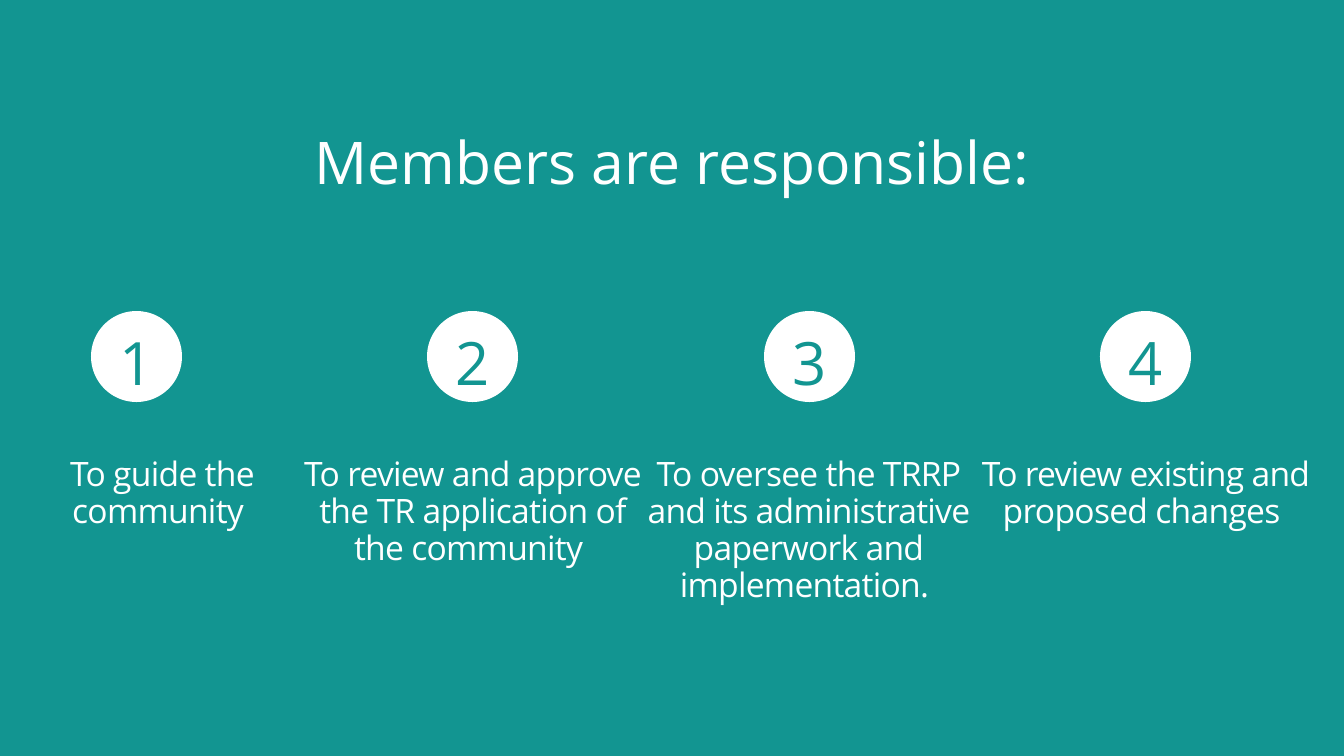
"""Build the slide listing the four responsibilities of members."""
from pptx import Presentation
from pptx import util as u
from pptx.dml.color import RGBColor
from pptx.enum import shapes, text
from pptx.oxml.ns import qn

TITLE = "Members are responsible:"
DUTIES = [
    ("To guide the community ", 73),
    ("To review and approve the TR application of the community ", 110),
    ("To oversee the TRRP and its administrative paperwork and implementation. ", 183),
    ("To review existing and proposed changes ", 73),
]

THEME = {
    "teal": RGBColor.from_string("129591"),
    "white": RGBColor.from_string("FFFFFF"),
    "font": "Open Sans",
    "title": {"size": 42, "line": 50.4, "spacing": 0, "color": "white"},
    "caption": {"size": 24, "line": 26.4, "spacing": -50, "color": "white"},
    "number": {"size": 42.7, "line": 67, "spacing": -110, "color": "teal"},
}

SLIDE_WIDTH, SLIDE_HEIGHT = 1344, 756
PITCH = 1009 / 3
CIRCLE_LEFT, CIRCLE_TOP, CIRCLE_SIZE = 91, 311, 91
NUMBER_TOP, NUMBER_HEIGHT = 304, 84
CAPTION_TOP, CAPTION_WIDTH = 456, 337
FIRST_LEFT, SECOND_LEFT = 20, 304


def px(length):
    return u.Emu(round(round(length) * 914400 / 100.8))


def set_all(target, values):
    for name, value in values.items():
        setattr(target, name, value)


def place(box, left, top, width, height):
    set_all(box, {"left": px(left), "top": px(top),
                  "width": px(width), "height": px(height)})


def write(box, words, style):
    frame = box.text_frame
    set_all(frame, {
        "word_wrap": True, "auto_size": text.MSO_AUTO_SIZE.NONE,
        "vertical_anchor": text.MSO_ANCHOR.TOP,
        "margin_left": 0, "margin_top": 0, "margin_right": 0, "margin_bottom": 0,
    })
    para = frame.paragraphs[0]
    set_all(para, {"alignment": text.PP_ALIGN.CENTER, "line_spacing": u.Pt(style["line"]),
                   "space_before": u.Pt(0), "space_after": u.Pt(0)})
    properties = para._p.get_or_add_pPr()
    properties.set("marL", "0")
    properties.set("indent", "0")
    properties.append(properties.makeelement(qn("a:buNone"), {}))
    span = para.add_run()
    span.text = words
    set_all(span.font, {"name": THEME["font"], "size": u.Pt(style["size"]), "bold": False})
    span.font.color.rgb = THEME[style["color"]]
    span._r.get_or_add_rPr().set("spc", str(style["spacing"]))


def add_circle(slide, left):
    circle = slide.shapes.add_shape(shapes.MSO_SHAPE.OVAL, px(left), px(CIRCLE_TOP),
                                    px(CIRCLE_SIZE), px(CIRCLE_SIZE))
    circle.shadow.inherit = False
    circle.fill.solid()
    circle.fill.fore_color.rgb = THEME["white"]
    circle.line.fill.background()


def main():
    deck = Presentation()
    set_all(deck, {"slide_width": px(SLIDE_WIDTH), "slide_height": px(SLIDE_HEIGHT)})
    slide = deck.slides.add_slide(deck.slide_layouts.get_by_name("Comparison"))
    slide.background.fill.solid()
    slide.background.fill.fore_color.rgb = THEME["teal"]

    title, *captions = slide.placeholders
    place(title, 273, 126, 798, 71)
    write(title, TITLE, THEME["title"])

    for index, ((duty, height), caption) in enumerate(zip(DUTIES, captions)):
        left = SECOND_LEFT + PITCH * (index - 1) if index else FIRST_LEFT
        width = CAPTION_WIDTH if index else SECOND_LEFT - FIRST_LEFT
        place(caption, left, CAPTION_TOP, width, height)
        write(caption, duty, THEME["caption"])

        circle_left = CIRCLE_LEFT + PITCH * index
        add_circle(slide, circle_left)
        number = slide.shapes.add_textbox(px(circle_left), px(NUMBER_TOP),
                                          px(CIRCLE_SIZE), px(NUMBER_HEIGHT))
        write(number, str(index + 1), THEME["number"])

    deck.save("out.pptx")


if __name__ == "__main__":
    main()
